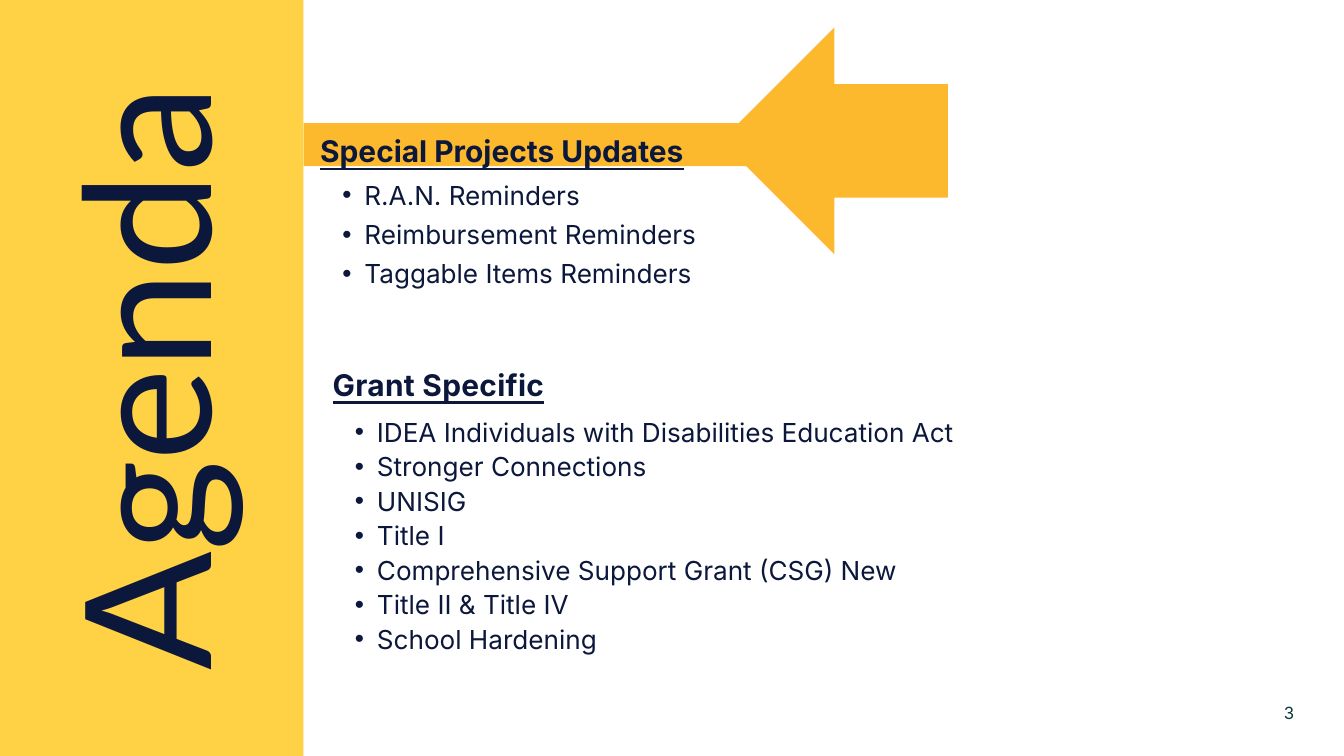
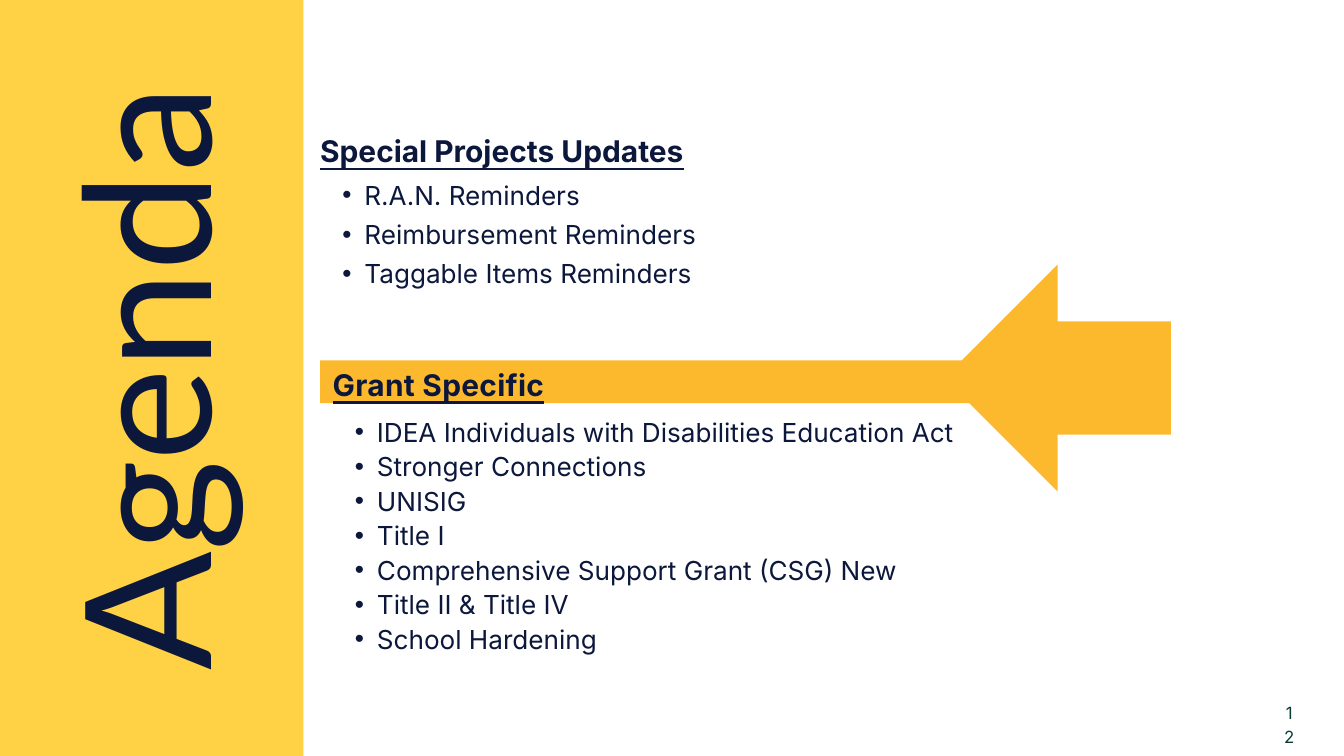
from dataclasses import dataclass

from lxml.etree import SubElement
from pptx import Presentation
from pptx.dml.color import RGBColor as Color
from pptx.enum.shapes import MSO_SHAPE as Preset
from pptx.enum.text import MSO_AUTO_SIZE as AutoSize, PP_ALIGN as Align
from pptx.oxml.ns import qn
from pptx.util import Pt


@dataclass(frozen=True)
class Theme:
    ink: Color = Color(0x0C, 0x17, 0x3C)
    number: Color = Color(0x0B, 0x39, 0x35)
    sidebar: Color = Color(0xFF, 0xD1, 0x45)
    marker: Color = Color(0xFD, 0xB9, 0x2E)
    paper: Color = Color(0xFF, 0xFF, 0xFF)
    body_font: str = "Inter"
    title_font: str = "Lato"
    title_size: float = 188.1
    heading_size: float = 32
    item_size: float = 28
    number_size: float = 18


THEME = Theme()
WIDTH, HEIGHT = 1440, 810

PROJECTS = ["R.A.N. Reminders", "Reimbursement Reminders", "Taggable Items Reminders"]
GRANTS = [
    "IDEA Individuals with Disabilities Education Act",
    "Stronger Connections",
    "UNISIG",
    "Title I",
    "Comprehensive Support Grant (CSG) New",
    "Title II & Title IV",
    "School Hardening",
]


def add_fill(page, preset, box, color):
    shape = page.shapes.add_shape(preset, *map(Pt, box))
    shape.shadow.inherit = False
    shape.fill.solid()
    shape.fill.fore_color.rgb = color
    shape.line.fill.background()
    return shape


def add_bullet(para):
    para.level = 1
    properties = para._p.get_or_add_pPr()
    properties.set("marL", str(Pt(47.5)))
    properties.set("indent", str(Pt(-23.75)))
    SubElement(properties, qn("a:buFont")).set("typeface", "Arial")
    SubElement(properties, qn("a:buChar")).set("char", "•")


def add_text(page, box, lines, size, spacing, color=THEME.ink, name=THEME.body_font,
             align=Align.LEFT, bullet=False, heading=False):
    text_box = page.shapes.add_textbox(*map(Pt, box))
    frame = text_box.text_frame
    frame.word_wrap = True
    frame.auto_size = AutoSize.SHAPE_TO_FIT_TEXT
    frame.margin_left = frame.margin_top = frame.margin_right = frame.margin_bottom = 0
    for index, line in enumerate(lines):
        para = frame.paragraphs[0] if index == 0 else frame.add_paragraph()
        para.text = line
        if bullet:
            add_bullet(para)
        para.alignment = align
        para.line_spacing = Pt(spacing)
        font = para.font
        font.name, font.size = name, Pt(size)
        font.color.rgb = color
        if heading:
            font.bold = font.underline = True
    return text_box


def add_marker(page, left, top, bar_width, arrow_left):
    """Bar behind a heading, with an arrow pointing at it."""
    side, bar_drop = 243, 102.5
    add_fill(page, Preset.LEFT_ARROW, (arrow_left, top - bar_drop, side, side), THEME.marker)
    add_fill(page, Preset.RECTANGLE, (left, top, bar_width, 46), THEME.marker)


def add_sidebar(page, width, height):
    add_fill(page, Preset.RECTANGLE, (0, 0, width, height), THEME.sidebar)
    # Vertical title
    title = add_text(page, (-181.4, 308.2, 720, 193.7), ["Agenda"], THEME.title_size,
                     182.4, name=THEME.title_font, align=Align.CENTER)
    title.rotation = 270


def add_projects(page, left, top, width):
    add_text(page, (left, top, width, 69), ["Special Projects Updates"],
             THEME.heading_size, 80, heading=True)
    add_text(page, (left, top + 82, width, 124.6), PROJECTS,
             THEME.item_size, 42.3, bullet=True)


def add_grants(page, left, top, width):
    heading = add_text(page, (left, top, width, 39), ["Grant Specific"],
                       THEME.heading_size, 38.4, align=Align.JUSTIFY, heading=True)
    heading.text_frame.paragraphs[0].font._element.set("spc", "30")
    first, pitch = top + 45.4, 36.96
    for index, grant in enumerate(GRANTS):
        add_text(page, (left, first + index * pitch, width, 39), [grant],
                 THEME.item_size, 40.9, bullet=True)


def add_agenda(deck, number, marker):
    page = deck.slides.add_slide(deck.slide_layouts[6])
    page.background.fill.solid()
    page.background.fill.fore_color.rgb = THEME.paper
    add_marker(page, *marker)
    add_projects(page, 343, 101, 911.5)
    add_grants(page, 356.4, 393, 911.5)
    add_sidebar(page, 325.2, 834)
    # Page number
    add_text(page, (1375.2, 749.5, 12.2, 15), [number], THEME.number_size, 25.2,
             color=THEME.number, align=Align.CENTER)


def main():
    deck = Presentation()
    deck.slide_width, deck.slide_height = Pt(WIDTH), Pt(HEIGHT)
    # Marker: bar left, bar top, bar width, arrow left
    add_agenda(deck, "3", (325.2, 132, 487.3, 772.5))
    add_agenda(deck, "12", (343, 386, 705, 1011.6))
    deck.save("out.pptx")


if __name__ == "__main__":
    main()
